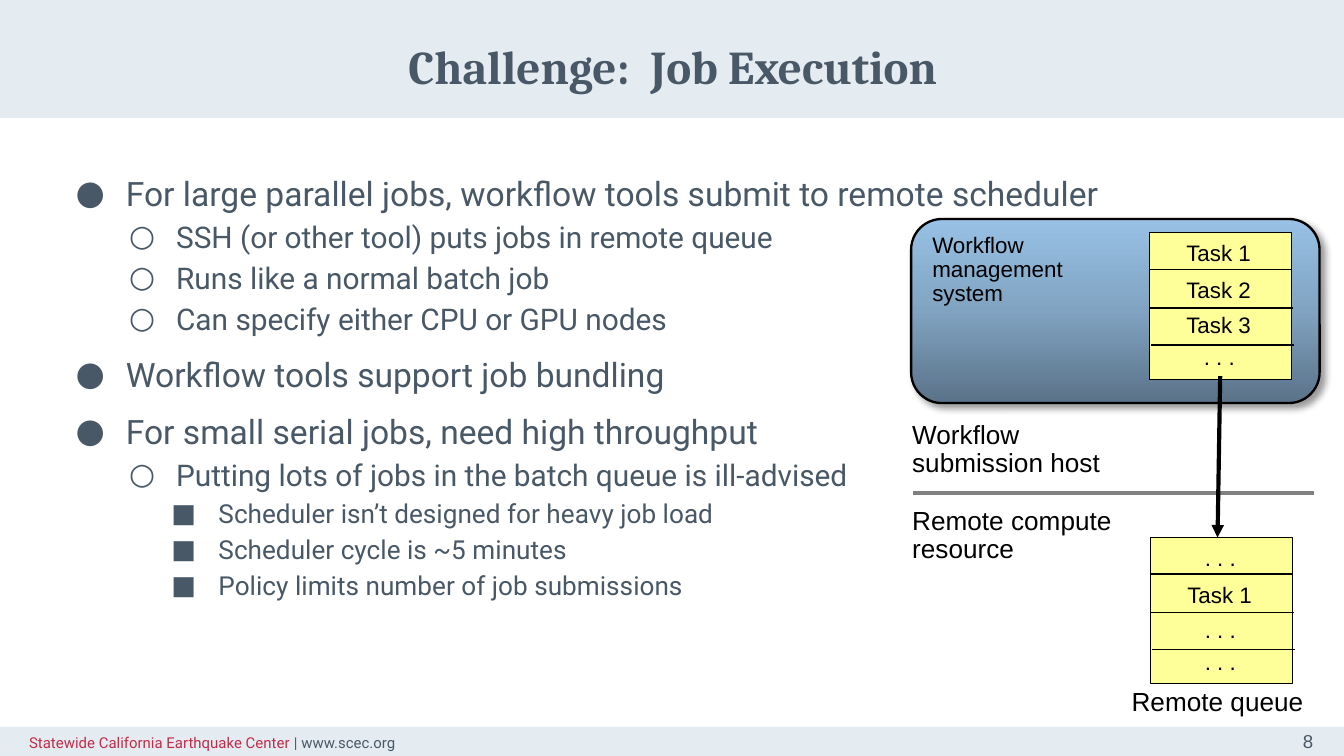
"""Build the job execution slide with its two task queues."""
from lxml import etree
from pptx import Presentation
from pptx.dml.color import RGBColor
from pptx.enum.shapes import MSO_CONNECTOR, MSO_SHAPE
from pptx.enum.text import MSO_ANCHOR, MSO_AUTO_SIZE, PP_ALIGN
from pptx.oxml import parse_xml
from pptx.oxml.ns import nsdecls, qn
from pptx.util import Cm, Pt

RECT, ROUND = MSO_SHAPE.RECTANGLE, MSO_SHAPE.ROUNDED_RECTANGLE
STRAIGHT = MSO_CONNECTOR.STRAIGHT
TOP, MID = MSO_ANCHOR.TOP, MSO_ANCHOR.MIDDLE
LEFT, MIDDLE, RIGHT = PP_ALIGN.LEFT, PP_ALIGN.CENTER, PP_ALIGN.RIGHT
NOFIT = MSO_AUTO_SIZE.NONE
INK, PALE, BLACK = "495867", "E4EBF1", "000000"
hue = RGBColor.from_string


def write(box, runs, size, font="Arial", align=LEFT, gap=1.0, pad=0.13, anchor=TOP):
    frame = box.text_frame
    frame.word_wrap = True
    frame.auto_size = NOFIT
    frame.vertical_anchor = anchor
    frame.margin_left = frame.margin_right = Cm(0.25)
    frame.margin_top = frame.margin_bottom = Cm(pad)
    para = frame.paragraphs[0]
    para.alignment = align
    para.line_spacing = gap
    for words, color in runs:
        run = para.add_run()
        run.text = words
        run.font.size = Pt(size)
        run.font.name = font
        run.font.color.rgb = hue(color)


def rule(x1, y1, x2, y2, width, color=BLACK):
    line = shapes.add_connector(STRAIGHT, Cm(x1), Cm(y1), Cm(x2), Cm(y2))
    line.line.color.rgb = hue(color)
    line.line.width = Pt(width)
    etree.SubElement(line._element.spPr, qn("a:effectLst"))
    return line


deck = Presentation()
deck.slide_width, deck.slide_height = Cm(25.4), Cm(14.29)
slide = deck.slides.add_slide(deck.slide_layouts[5])
shapes = slide.shapes

for top, high in ((13.74, 0.55), (0, 2.23)):
    band = shapes.add_shape(RECT, 0, Cm(top), Cm(25.4), Cm(high))
    band.shadow.inherit = False
    band.fill.solid()
    band.fill.fore_color.rgb = hue(PALE)
    band.line.fill.background()

title = shapes.title
shapes._spTree.append(title._element)
title.left, title.top, title.width, title.height = Cm(2.95), Cm(0.46), Cm(19.53), Cm(1.6)
write(title, [("Challenge:  Job Execution", INK)], 25.2, "Cambria", MIDDLE, pad=0.25)
title.text_frame.paragraphs[0].runs[0].font.bold = True

points = (
    (0, "For large parallel jobs, workflow tools submit to remote scheduler"),
    (1, "SSH (or other tool) puts jobs in remote queue"),
    (1, "Runs like a normal batch job"),
    (1, "Can specify either CPU or GPU nodes"),
    (0, "Workflow tools support job bundling"),
    (0, "For small serial jobs, need high throughput"),
    (1, "Putting lots of jobs in the batch queue is ill-advised"),
    (2, "Scheduler isn’t designed for heavy job load"),
    (2, "Scheduler cycle is ~5 minutes"),
    (2, "Policy limits number of job submissions"),
)
levels = ((18, 1.27, 0.95, "●"), (16, 2.22, 0.89, "○"), (14, 3.02, 0.89, "■"))
body = shapes.add_textbox(Cm(0.86), Cm(2.9), Cm(23.67), Cm(9.8)).text_frame
body.word_wrap = True
body.margin_left = body.margin_right = body.margin_top = body.margin_bottom = Cm(0.25)
for at, (level, words) in enumerate(points):
    size, left, hang, mark = levels[level]
    para = body.add_paragraph() if at else body.paragraphs[0]
    para.level = level
    para.line_spacing = 1.15
    para.space_before = Pt(6 if at and level == 0 else 0)
    props = para._p.get_or_add_pPr()
    props.set("marL", str(Cm(left)))
    props.set("indent", str(-Cm(hang)))
    color = etree.SubElement(props, qn("a:buClr"))
    etree.SubElement(color, qn("a:srgbClr"), val=INK)
    etree.SubElement(props, qn("a:buFont"), typeface="Roboto")
    etree.SubElement(props, qn("a:buChar"), char=mark)
    run = para.add_run()
    run.text = words
    run.font.size = Pt(size)
    run.font.name = "Roboto"
    run.font.color.rgb = hue(INK)

host = shapes.add_shape(ROUND, Cm(17.22), Cm(4.14), Cm(7.72), Cm(3.48))
host.line.color.rgb = hue(BLACK)
host.line.width = Pt(1.25)
stops = "".join(
    f'<a:gs pos="{pos}000"><a:srgbClr val="{color}"/></a:gs>'
    for pos, color in ((0, "5A7288"), (50, "80A3C1"), (100, "98C1E5"))
)
props = host._element.spPr
props.find(qn("a:prstGeom")).addnext(parse_xml(
    f'<a:gradFill {nsdecls("a")} rotWithShape="1"><a:gsLst>{stops}</a:gsLst>'
    '<a:lin ang="16200000" scaled="0"/></a:gradFill>'
))
props.append(parse_xml(
    f'<a:effectLst {nsdecls("a")}><a:outerShdw blurRad="{Pt(4)}" dist="{Pt(3)}" '
    'dir="2700000" algn="tl" rotWithShape="0"><a:srgbClr val="000000">'
    '<a:alpha val="40000"/></a:srgbClr></a:outerShdw></a:effectLst>'
))

rule(17.25, 9.32, 24.84, 9.32, 2.25, "808080")
labels = (
    ("Workflow management system", 17.37, 4.29, 4.11, 1.65, 12, LEFT),
    ("Workflow submission host", 16.99, 7.85, 4.34, 1.35, 14, LEFT),
    ("Remote compute resource", 16.99, 9.47, 5.46, 1.35, 14, LEFT),
    ("Remote queue", 20.32, 12.9, 5.38, 0.79, 14, MIDDLE),
)
for words, left, top, wide, high, size, align in labels:
    box = shapes.add_textbox(Cm(left), Cm(top), Cm(wide), Cm(high))
    write(box, [(words, BLACK)], size, align=align, gap=0.9)

queues = (
    (21.72, 4.4, ("Task 1", "Task 2", "Task 3", ". . .")),
    (21.74, 10.16, (". . .", "Task 1", ". . .", ". . .")),
)
for left, top, tasks in queues:
    queue = shapes.add_shape(RECT, Cm(left), Cm(top), Cm(2.69), Cm(2.77))
    queue.shadow.inherit = False
    queue.fill.solid()
    queue.fill.fore_color.rgb = hue("FFFF99")
    queue.line.color.rgb = hue(BLACK)
    queue.line.width = Pt(0.5)
    for task, down in zip(tasks, (0, 0.69, 1.36, 1.96)):
        dots = task == ". . ."
        box = shapes.add_textbox(
            Cm(left + (0.26 if dots else 0.45)), Cm(top + down), Cm(2.13), Cm(0.76))
        write(box, [(task, BLACK)], 12, align=MIDDLE if dots else LEFT)
    for step, down in enumerate((0.69, 1.42, 2.12)):
        start = left + 0.02 * step
        rule(start, top + down, start + 2.69, top + down, 0.75)

arrow = rule(23.06, 7.11, 23.01, 10.16, 2.25)
etree.SubElement(arrow.line._get_or_add_ln(), qn("a:tailEnd"), type="triangle")

page = shapes.add_textbox(Cm(23.55), Cm(13.74), Cm(1.52), Cm(0.55))
write(page, [("8", INK)], 10, align=RIGHT, pad=0.25, anchor=MID)
foot = shapes.add_textbox(Cm(0.3), Cm(13.74), Cm(8.56), Cm(0.55))
write(foot, [("Statewide California Earthquake Center", "C22B48"), (" | www.scec.org", INK)],
      8, "Roboto", gap=1.15, pad=0.25, anchor=MID)

deck.save("out.pptx")
